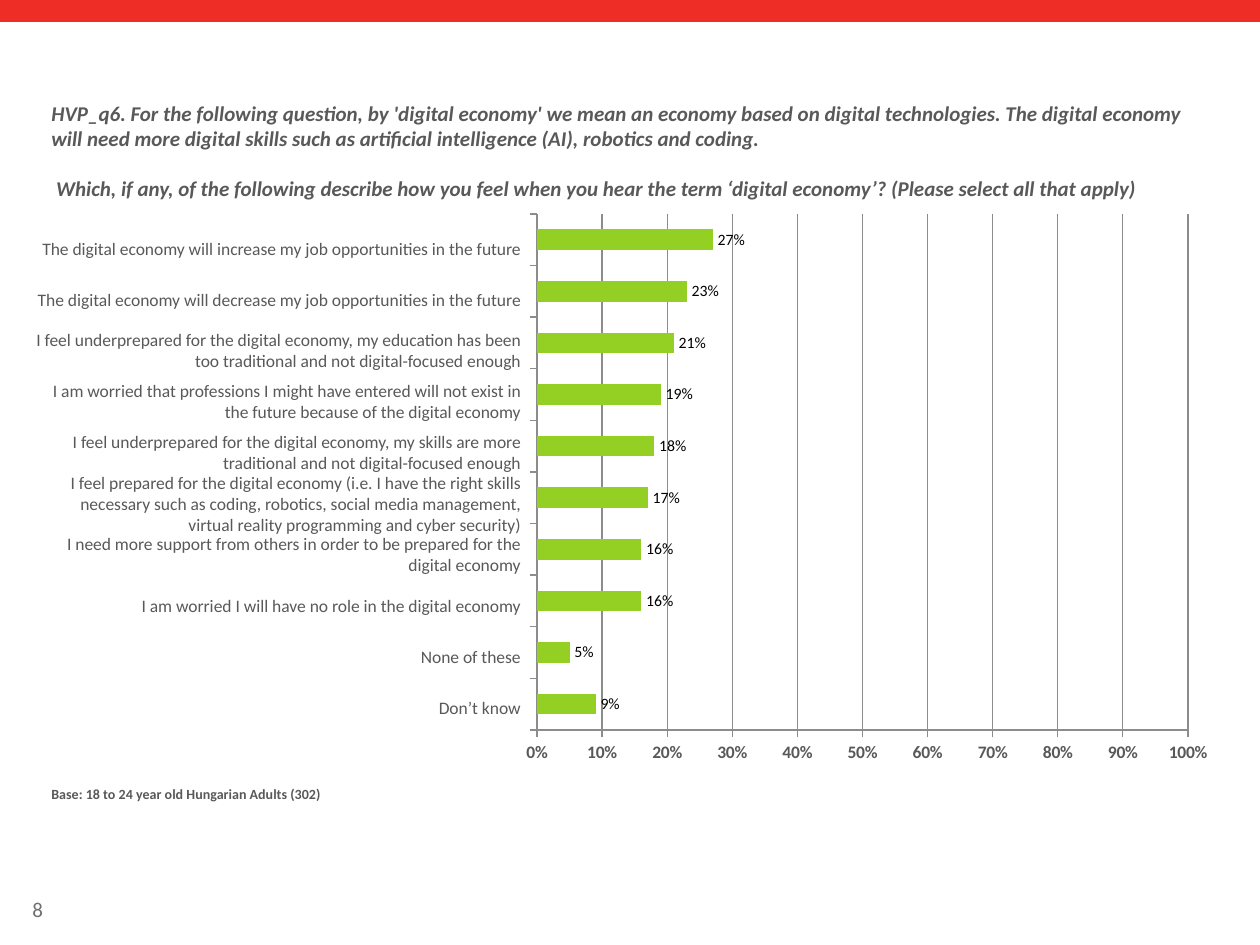
from lxml import etree
from pptx import Presentation
from pptx.chart.data import CategoryChartData
from pptx.dml.color import RGBColor
from pptx.enum.chart import XL_CHART_TYPE as ChartType, XL_LABEL_POSITION as LabelPosition
from pptx.enum.chart import XL_TICK_LABEL_POSITION as TickLabel, XL_TICK_MARK as TickMark
from pptx.enum.shapes import MSO_SHAPE as Shape
from pptx.enum.text import MSO_ANCHOR as Anchor, PP_ALIGN as Align
from pptx.oxml import parse_xml
from pptx.oxml.ns import nsdecls
from pptx.util import Pt

EMU_PER_PX = 914400 / 126
FONT = "Calibri"
RED, GREEN, DARK, GREY, LINE, BLACK = "EE2D27", "93D023", "595959", "6D6F71", "8C8C8C", "000000"

QUESTION = [
    "HVP_q6. For the following question, by 'digital economy' we mean an economy based on "
    "digital technologies. The digital economy will need more digital skills such as "
    "artificial intelligence (AI), robotics and coding.",
    " Which, if any, of the following describe how you feel when you hear the term "
    "‘digital economy’? (Please select all that apply)",
]
ANSWERS = [
    ("The digital economy will increase my job opportunities in the future", 0.27),
    ("The digital economy will decrease my job opportunities in the future", 0.23),
    ("I feel underprepared for the digital economy, my education has been too traditional "
     "and not digital-focused enough", 0.21),
    ("I am worried that professions I might have entered will not exist in the future "
     "because of the digital economy", 0.19),
    ("I feel underprepared for the digital economy, my skills are more traditional "
     "and not digital-focused enough", 0.18),
    ("I feel prepared for the digital economy (i.e. I have the right skills necessary such as "
     "coding, robotics, social media management, virtual reality programming and cyber security)",
     0.17),
    ("I need more support from others in order to be prepared for the digital economy", 0.16),
    ("I am worried I will have no role in the digital economy", 0.16),
    ("None of these", 0.05),
    ("Don’t know", 0.09),
]
BASE = "Base: 18 to 24 year old Hungarian Adults (302)"
PAGE_NUMBER = "8"

CHART_BOX = (513, 203, 709, 571)
PLOT_BOX = (537, 214, 651, 516)
LABEL_LEFT, LABEL_TOP, LABEL_WIDTH, LABEL_PITCH = 20, 223, 513, 51


def px(value):
    return round(value * EMU_PER_PX)


def color(value):
    return RGBColor.from_string(value)


def style(font, size, value, bold=False, italic=False):
    font.name, font.size, font.bold, font.italic = FONT, Pt(size), bold, italic
    font.color.rgb = color(value)


def add_text(slide, box, lines, size, value=DARK, bold=False, italic=False,
             align=Align.LEFT, anchor=Anchor.TOP, gap=0):
    frame = slide.shapes.add_textbox(*map(px, box)).text_frame
    frame.word_wrap = True
    frame.vertical_anchor = anchor
    for index, line in enumerate(lines):
        paragraph = frame.add_paragraph() if index else frame.paragraphs[0]
        paragraph.text = line
        paragraph.alignment = align
        if index:
            paragraph.space_before = Pt(gap)
        style(paragraph.font, size, value, bold, italic)


def set_plot_layout(chart):
    left, top, width, height = CHART_BOX
    x, y, plot_width, plot_height = PLOT_BOX
    parts = {"x": (x - left) / width, "y": (y - top) / height,
             "w": plot_width / width, "h": plot_height / height}
    modes = '<c:layoutTarget val="inner"/><c:xMode val="edge"/><c:yMode val="edge"/>'
    sizes = "".join(f'<c:{name} val="{part:.4f}"/>' for name, part in parts.items())
    plot_area = chart.element.chart.plotArea
    for layout in plot_area.findall("{*}layout"):
        plot_area.remove(layout)
    plot_area.insert(0, parse_xml(
        f'<c:layout {nsdecls("c")}><c:manualLayout>{modes}{sizes}</c:manualLayout></c:layout>'))


def add_answer_chart(slide):
    data = CategoryChartData(number_format="0%")
    data.categories = [str(number) for number in range(1, len(ANSWERS) + 1)]
    data.add_series("Series 1", [share for _, share in reversed(ANSWERS)])
    chart = slide.shapes.add_chart(ChartType.BAR_CLUSTERED, *map(px, CHART_BOX), data).chart
    chart.has_legend = chart.has_title = False
    style(chart.font, 10, DARK)
    set_plot_layout(chart)

    plot = chart.plots[0]
    plot.gap_width, plot.overlap, plot.vary_by_categories = 150, -10, False
    bars = plot.series[0]
    bars.format.fill.solid()
    bars.format.fill.fore_color.rgb = color(GREEN)
    labels = bars.data_labels
    labels.show_value, labels.position = True, LabelPosition.OUTSIDE_END
    labels.number_format, labels.number_format_is_linked = "0%", False
    style(labels.font, 9, BLACK)

    answers, shares = chart.category_axis, chart.value_axis
    answers.tick_label_position = TickLabel.NONE
    shares.tick_label_position = TickLabel.LOW
    shares.minimum_scale, shares.maximum_scale, shares.major_unit = 0, 1, 0.1
    shares.tick_labels.number_format = "0%"
    shares.tick_labels.number_format_is_linked = False
    style(shares.tick_labels.font, 10, DARK, bold=True)
    shares.has_major_gridlines = True
    for axis in (answers, shares):
        axis.major_tick_mark, axis.minor_tick_mark = TickMark.OUTSIDE, TickMark.NONE
    for part in (answers, shares, shares.major_gridlines):
        part.format.line.color.rgb = color(LINE)
        part.format.line.width = Pt(0.75)


def main():
    """Build the survey slide with its question, answer labels and bar chart."""
    presentation = Presentation()
    presentation.slide_width, presentation.slide_height = px(1260), px(945)
    slide = presentation.slides.add_slide(presentation.slide_layouts[6])

    band = slide.shapes.add_shape(Shape.RECTANGLE, 0, 0, px(1260), px(22))
    band.shadow.inherit = False
    band.fill.solid()
    band.fill.fore_color.rgb = color(RED)
    band.line.fill.background()

    add_text(slide, (20, 890, 97, 38), [PAGE_NUMBER], 12, GREY, anchor=Anchor.MIDDLE)
    add_text(slide, (39, 94, 1183, 111), QUESTION, 12, bold=True, italic=True, gap=14.4)
    add_answer_chart(slide)
    for row, (answer, _) in enumerate(ANSWERS):
        box = (LABEL_LEFT, LABEL_TOP + row * LABEL_PITCH, LABEL_WIDTH, LABEL_PITCH)
        add_text(slide, box, [answer], 10, align=Align.RIGHT, anchor=Anchor.MIDDLE)
    add_text(slide, (39, 779, 1183, 54), [BASE], 8, bold=True)
    presentation.save("out.pptx")


if __name__ == "__main__":
    main()
